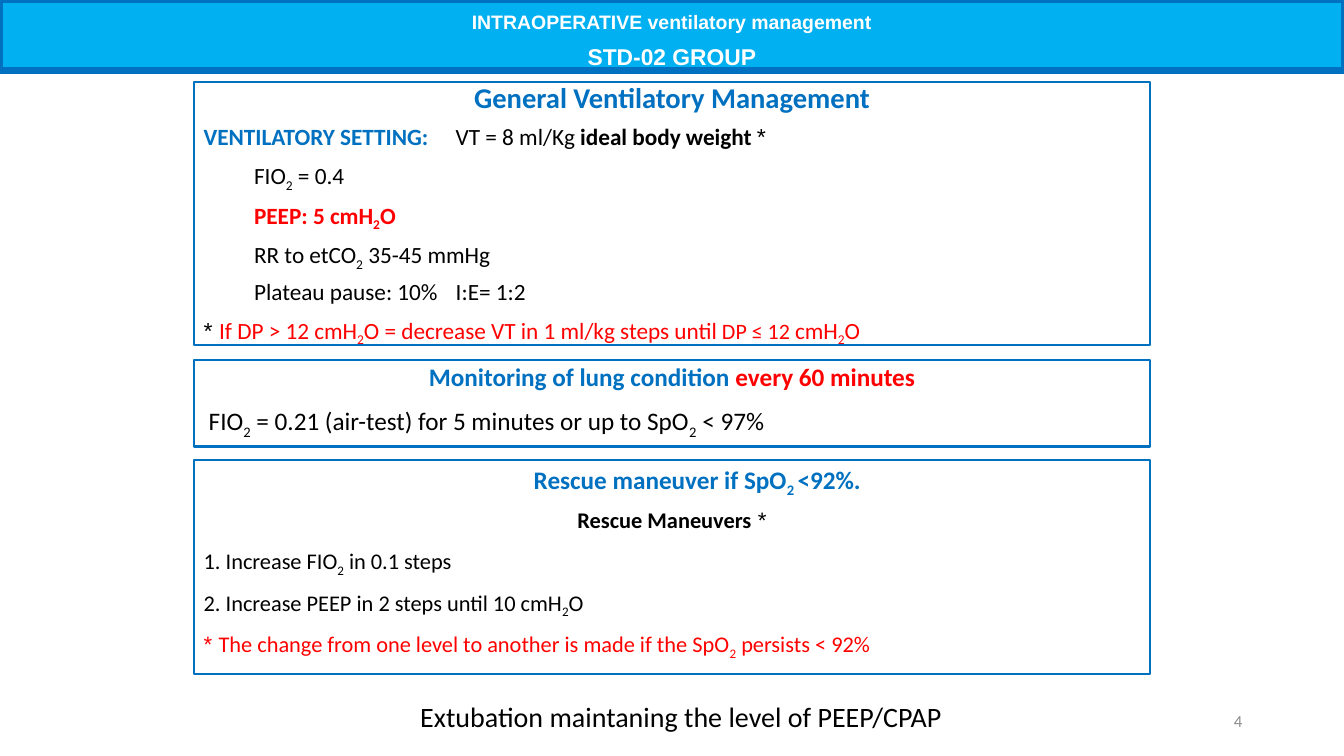
import pptx
import pptx.dml.color
import pptx.enum.text
import pptx.oxml.ns
import pptx.util
from lxml import etree

Inches = pptx.util.Inches
Pt = pptx.util.Pt
ALIGN = pptx.enum.text.PP_ALIGN
ANCHOR = pptx.enum.text.MSO_ANCHOR

BLUE = "0070C0"
SKY = "00B0F0"
RED = "FF0000"
BLACK = "000000"
WHITE = "FFFFFF"
GREY = "8C8C8C"

PANEL_LEFT = 1.92
PANEL_WIDTH = 9.49
SETTING_TABS = (2.29, 4.6)


def color(value):
    return pptx.dml.color.RGBColor.from_string(value)


def add_text(para, text, size=16, tint=BLACK, bold=False, font="Calibri"):
    for index, part in enumerate(text.split("_")):
        if not part:
            continue
        span = para.add_run()
        span.text = part
        span.font.size = Pt(size)
        span.font.name = font
        span.font.bold = bold
        span.font.color.rgb = color(tint)
        if index % 2:
            span.font._element.set("baseline", "-25000")


def add_paragraph(box, spans, align=ALIGN.LEFT, spacing=0.9, before=10, indent=0, tabs=()):
    frame = box.text_frame
    para = frame.paragraphs[0]
    if para.runs:
        para = frame.add_paragraph()
    para.alignment = align
    para.line_spacing = spacing
    para.space_before = Pt(before)
    para.space_after = Pt(0)
    properties = para._p.get_or_add_pPr()
    properties.set("marL", str(Inches(indent)))
    properties.set("indent", "0")
    qualified = pptx.oxml.ns.qn
    etree.SubElement(properties, qualified("a:buNone"))
    if tabs:
        stops = etree.SubElement(properties, qualified("a:tabLst"))
        for position in tabs:
            etree.SubElement(stops, qualified("a:tab"), pos=str(Inches(position)), algn="l")
    for text, style in spans:
        add_text(para, text, **style)


def place(box, left, top, width, height, margin_top=0.05, anchor=ANCHOR.TOP):
    box.left, box.top = Inches(left), Inches(top)
    box.width, box.height = Inches(width), Inches(height)
    frame = box.text_frame
    frame.word_wrap = True
    frame.auto_size = pptx.enum.text.MSO_AUTO_SIZE.NONE
    frame.vertical_anchor = anchor
    frame.margin_left = frame.margin_right = Inches(0.1)
    frame.margin_top, frame.margin_bottom = Inches(margin_top), Inches(0.05)


def outline(box, width):
    box.line.color.rgb = color(BLUE)
    box.line.width = Pt(width)


def build_banner(box, left, top, width, height):
    place(box, left, top, width, height, margin_top=0.16)
    box.fill.solid()
    box.fill.fore_color.rgb = color(SKY)
    outline(box, 4.5)
    lines = (("INTRAOPERATIVE ventilatory management", 13.9, 0), ("STD-02 GROUP", 16.3, 12.5))
    for text, size, before in lines:
        style = dict(size=size, tint=WHITE, bold=True, font="Arial")
        add_paragraph(box, [(text, style)], ALIGN.CENTER, spacing=0.7, before=before)


def build_general(box, left, top, width, height):
    place(box, left, top, width, height)
    outline(box, 1.5)
    plain = dict(size=16.6)
    strong = dict(size=16.6, bold=True)
    star = dict(size=16.6, font="Arial")
    red = dict(size=16.6, tint=RED)
    heading = dict(size=20.4, tint=BLUE, bold=True)
    add_paragraph(box, [("General Ventilatory Management", heading)], ALIGN.CENTER, spacing=0.8)
    rows = (
        [("VENTILATORY SETTING:", dict(strong, tint=BLUE)), ("\tVT = 8 ml/Kg ", plain),
         ("ideal body weight ", strong), ("*", star)],
        [("\tFIO_2_ = 0.4", plain)],
        [("\tPEEP: 5 cmH_2_O", dict(red, bold=True))],
        [("\tRR to etCO_2_ 35-45 mmHg", plain)],
        [("\tPlateau pause: 10%\tI:E= 1:2", plain)],
    )
    for row in rows:
        add_paragraph(box, row, spacing=0.8, tabs=SETTING_TABS)
    note = [("* ", star), ("If DP > 12 cmH_2_O = decrease VT in 1 ml/kg steps until ", red),
            ("DP ≤ 12 ", dict(red, size=15.7)), ("cmH_2_O", red)]
    add_paragraph(box, note, spacing=0.8)


def build_monitoring(box, left, top, width, height):
    place(box, left, top, width, height)
    outline(box, 1.5)
    heading = dict(size=18, tint=BLUE, bold=True)
    add_paragraph(box, [("Monitoring of lung condition ", heading),
                        ("every 60 minutes", dict(heading, tint=RED))], ALIGN.CENTER)
    test = "FIO_2_ = 0.21 (air-test) for 5 minutes or up to SpO_2_ < 97%"
    add_paragraph(box, [(test, dict(size=18))], indent=0.05)


def build_rescue(box, left, top, width, height):
    place(box, left, top, width, height)
    outline(box, 1.5)
    heading = dict(size=18, tint=BLUE, bold=True)
    add_paragraph(box, [("Rescue maneuver if SpO_2 _<92%.", heading)],
                  ALIGN.CENTER, before=5, indent=0.5)
    add_paragraph(box, [("Rescue Maneuvers", dict(bold=True)), (" *", dict(font="Arial"))],
                  ALIGN.CENTER)
    for step in ("1. Increase FIO_2_ in 0.1 steps", "2. Increase PEEP in 2 steps until 10 cmH_2_O"):
        add_paragraph(box, [(step, {})])
    note = "The change from one level to another is made if the SpO_2_ persists < 92%"
    add_paragraph(box, [("* ", dict(tint=RED, font="Arial")), (note, dict(tint=RED))])


def build_extubation(box, left, top, width, height):
    place(box, left, top, width, height, margin_top=0.49)
    add_paragraph(box, [("Extubation maintaning the level of PEEP/CPAP", dict(size=20))],
                  ALIGN.CENTER, before=5, indent=0.5)


def build_page_number(box, left, top, width, height):
    place(box, left, top, width, height, anchor=ANCHOR.MIDDLE)
    add_paragraph(box, [("4", dict(size=12, tint=GREY))], ALIGN.RIGHT, spacing=1.0, before=0)


def main():
    deck = pptx.Presentation()
    deck.slide_width, deck.slide_height = Inches(13.33), Inches(7.5)
    page = deck.slides.add_slide(deck.slide_layouts.get_by_name("Comparison"))
    general, monitoring, rescue, extubation = list(page.placeholders)[1:5]
    build_banner(page.shapes.title, 0, 0, 13.33, 0.7)
    build_general(general, PANEL_LEFT, 0.81, PANEL_WIDTH, 2.61)
    build_monitoring(monitoring, PANEL_LEFT, 3.57, PANEL_WIDTH, 0.86)
    build_rescue(rescue, PANEL_LEFT, 4.56, PANEL_WIDTH, 2.13)
    build_extubation(extubation, 0, 6.49, 13.01, 1.01)
    number = page.shapes.add_textbox(0, 0, Inches(1), Inches(1))
    build_page_number(number, 9.42, 6.95, 3, 0.4)
    deck.save("out.pptx")


if __name__ == "__main__":
    main()
